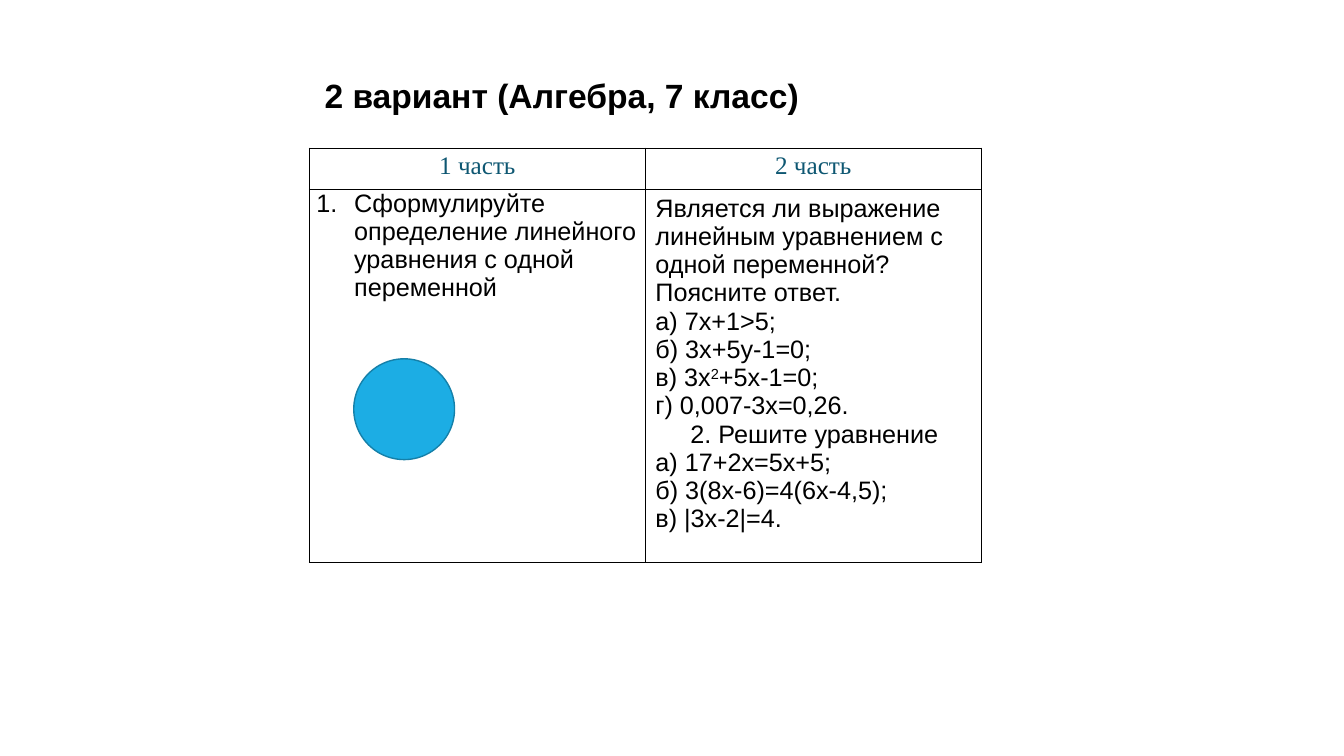
from dataclasses import dataclass

from lxml import etree
from pptx import Presentation
from pptx.dml.color import RGBColor
from pptx.enum.shapes import MSO_SHAPE
from pptx.enum.text import MSO_ANCHOR, MSO_AUTO_SIZE, PP_ALIGN
from pptx.oxml.ns import qn
from pptx.util import Pt

OVAL = MSO_SHAPE.OVAL
LEFT, CENTER = PP_ALIGN.LEFT, PP_ALIGN.CENTER
TOP = MSO_ANCHOR.TOP
NO_FIT = MSO_AUTO_SIZE.NONE
TITLE_ONLY = 5


@dataclass(frozen=True)
class Theme:
    ink: str = "000000"
    paper: str = "FFFFFF"
    heading: str = "0E5772"
    disc: str = "1CADE4"
    disc_edge: str = "1580A9"
    body_font: str = "Arial"
    heading_font: str = "Times New Roman"
    title_size: float = 24
    text_size: float = 18
    line_width: float = 1


class Sheet:
    def __init__(self, deck, theme):
        self.theme = theme
        self.page = deck.slides.add_slide(deck.slide_layouts[TITLE_ONLY])

    def span(self, para, text, size, font=None, color=None, bold=False, raised=False):
        span = para.add_run()
        span.text = text
        span.font.size = Pt(size)
        span.font.name = font or self.theme.body_font
        span.font.color.rgb = RGBColor.from_string(color or self.theme.ink)
        span.font.bold = bold
        if raised:
            span._r.get_or_add_rPr().set("baseline", "30000")

    def title(self, text, left, top, width, height):
        box = self.page.shapes.title
        box.left, box.top, box.width, box.height = map(Pt, (left, top, width, height))
        frame = box.text_frame
        frame.word_wrap = True
        frame.auto_size = NO_FIT
        frame.vertical_anchor = TOP
        para = frame.paragraphs[0]
        para.alignment = LEFT
        self.span(para, text, self.theme.title_size, bold=True)

    def table(self, left, top, widths, heights):
        box = self.page.shapes.add_table(
            len(heights), len(widths), Pt(left), Pt(top), Pt(sum(widths)), Pt(sum(heights)))
        table = box.table
        table.first_row = table.horz_banding = False
        for column, width in zip(table.columns, widths):
            column.width = Pt(width)
        for row, height in zip(table.rows, heights):
            row.height = Pt(height)
        for cell in table.iter_cells():
            cell.fill.solid()
            cell.fill.fore_color.rgb = RGBColor.from_string(self.theme.paper)
            self.border(cell)
        return table

    def border(self, cell):
        properties = cell._tc.get_or_add_tcPr()
        for index, side in enumerate(("a:lnL", "a:lnR", "a:lnT", "a:lnB")):
            line = etree.Element(qn(side), w=str(Pt(self.theme.line_width)))
            fill = etree.SubElement(line, qn("a:solidFill"))
            etree.SubElement(fill, qn("a:srgbClr"), val=self.theme.ink)
            properties.insert(index, line)

    def margins(self, cell, side, end):
        cell.margin_left = cell.margin_right = Pt(side)
        cell.margin_top = cell.margin_bottom = Pt(end)

    def heading(self, cell, text):
        self.margins(cell, 5, 0)
        para = cell.text_frame.paragraphs[0]
        para.alignment = CENTER
        para.line_spacing = 1.15
        self.span(para, text, self.theme.text_size,
                  self.theme.heading_font, self.theme.heading)

    def numbered(self, cell, text, indent):
        self.margins(cell, 5, 0)
        para = cell.text_frame.paragraphs[0]
        properties = para._p.get_or_add_pPr()
        properties.set("marL", str(Pt(indent)))
        properties.set("indent", str(Pt(-indent)))
        etree.SubElement(properties, qn("a:buFont"), typeface=self.theme.body_font)
        etree.SubElement(properties, qn("a:buAutoNum"), type="arabicPeriod")
        self.span(para, text, self.theme.text_size)

    def tasks(self, cell, lines):
        self.margins(cell, 7.2, 3.6)
        frame = cell.text_frame
        for index, (indent, parts) in enumerate(lines):
            para = frame.add_paragraph() if index else frame.paragraphs[0]
            if indent:
                para._p.get_or_add_pPr().set("marL", str(Pt(indent)))
            for position, part in enumerate(parts):
                self.span(para, part, self.theme.text_size, raised=position == 1)

    def disc(self, left, top, size):
        disc = self.page.shapes.add_shape(OVAL, Pt(left), Pt(top), Pt(size), Pt(size))
        disc.shadow.inherit = False
        disc.fill.solid()
        disc.fill.fore_color.rgb = RGBColor.from_string(self.theme.disc)
        disc.line.color.rgb = RGBColor.from_string(self.theme.disc_edge)
        disc.line.width = Pt(self.theme.line_width)


TASKS = [
    (0, ["Является ли выражение линейным уравнением с одной переменной? Поясните ответ."]),
    (0, ["а) 7х+1>5;"]),
    (0, ["б) 3х+5у-1=0;"]),
    (0, ["в) 3х", "2", "+5х-1=0;"]),
    (0, ["г) 0,007-3х=0,26."]),
    (25, ["2. Решите уравнение"]),
    (0, ["а) 17+2х=5х+5;"]),
    (0, ["б) 3(8х-6)=4(6х-4,5);"]),
    (0, ["в) |3х-2|=4."]),
]


def main():
    deck = Presentation()
    deck.slide_width, deck.slide_height = Pt(960), Pt(540)
    sheet = Sheet(deck, Theme())
    sheet.title("2 вариант (Алгебра, 7 класс)", 224.6, 49.7, 357, 36)
    table = sheet.table(221, 105.8, [240, 240], [29.5, 266.4])
    for column, text in enumerate(("1 часть", "2 часть")):
        sheet.heading(table.cell(0, column), text)
    sheet.numbered(table.cell(1, 0),
                   "Сформулируйте определение линейного уравнения с одной переменной", 27)
    sheet.tasks(table.cell(1, 1), TASKS)
    sheet.disc(252.7, 256.3, 72)
    deck.save("out.pptx")


if __name__ == "__main__":
    main()
